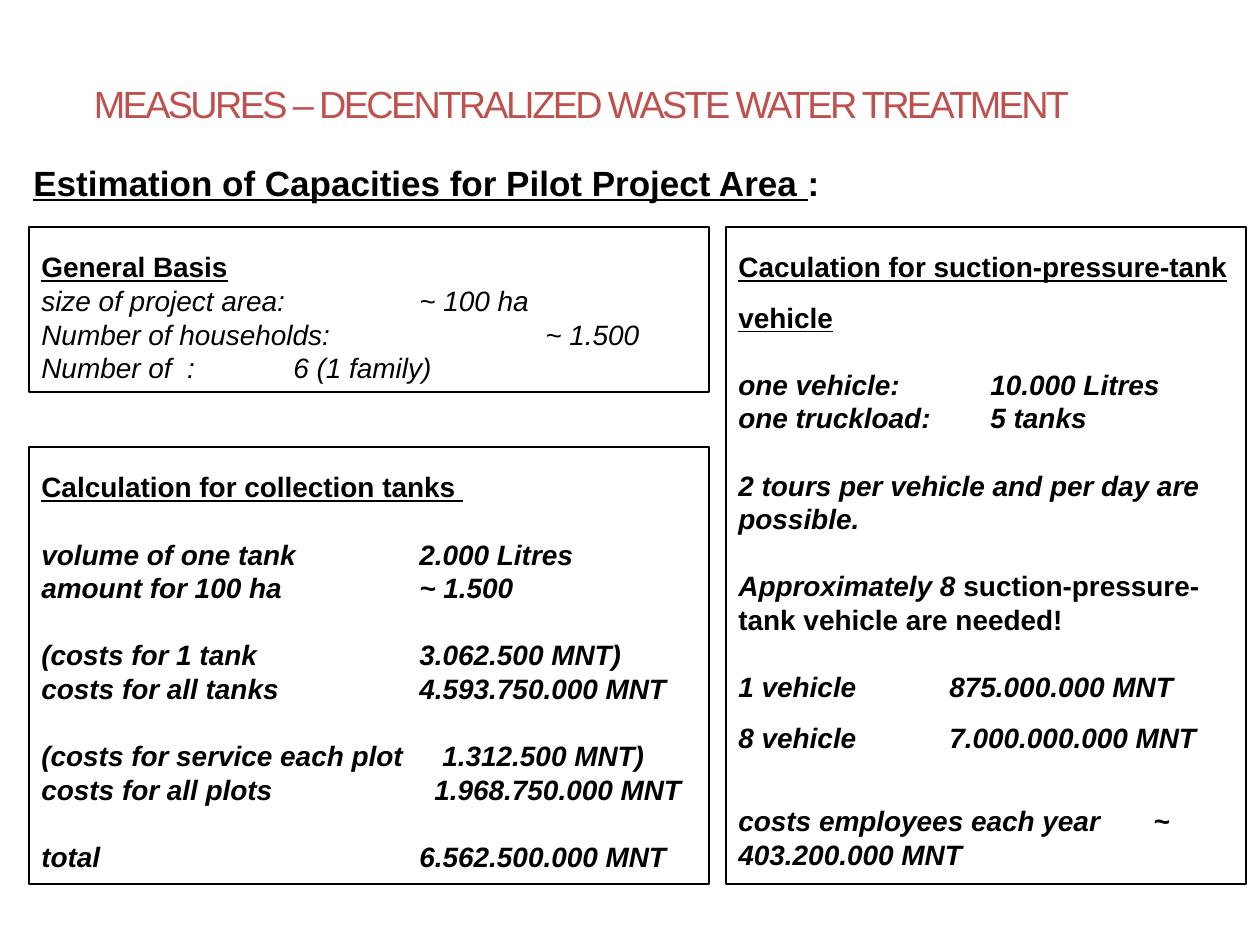
"""Build the slide estimating waste water capacities for the pilot project area."""
from lxml import etree
from pptx import Presentation
from pptx.dml.color import RGBColor
from pptx.enum.shapes import MSO_SHAPE
from pptx.enum.text import MSO_ANCHOR, PP_ALIGN
from pptx.oxml.ns import qn
from pptx.util import Emu, Pt

RECTANGLE = MSO_SHAPE.RECTANGLE
TOP, MIDDLE = MSO_ANCHOR.TOP, MSO_ANCHOR.MIDDLE
LEFT, CENTER = PP_ALIGN.LEFT, PP_ALIGN.CENTER
COLORS = {"text": "000000", "title": "C0504D", "border": "000000"}
FONT = "Arial"
BLANK_LAYOUT = 6
GAP, WIDE_GAP = 19.2, 28.8

HEADING = {"bold": True, "underline": True}
PLAIN = {"italic": True}
STRONG = {"bold": True, "italic": True}
UPRIGHT = {"bold": True}

TITLE = "MEASURES – DECENTRALIZED WASTE WATER TREATMENT"
SUBTITLE = [("Estimation of Capacities for Pilot Project Area ", HEADING), (":", UPRIGHT)]

BASIS = [
    ([("General Basis", HEADING)], {"spacing": 1.5}),
    ([("size of project area:\t~ 100 ha", PLAIN)], {"tab": 378}),
    ([("Number of households:\t~ 1.500", PLAIN)], {"tab": 504}),
    ([("Number of  :\t6 (1 family)", PLAIN)], {"tab": 252}),
]
TANKS = [
    ([("Calculation for collection tanks ", HEADING)], {"spacing": 1.5}),
    ([("volume of one tank\t2.000 Litres", STRONG)], {"tab": 378, "before": GAP}),
    ([("amount for 100 ha\t~ 1.500", STRONG)], {"tab": 378}),
    ([("(costs for 1 tank\t3.062.500 MNT)", STRONG)], {"tab": 378, "before": GAP}),
    ([("costs for all tanks\t4.593.750.000 MNT", STRONG)], {"tab": 378}),
    ([("(costs for service each plot\t1.312.500 MNT)", STRONG)], {"tab": 401, "before": GAP}),
    ([("costs for all plots\t1.968.750.000 MNT", STRONG)], {"tab": 393}),
    ([("total\t6.562.500.000 MNT", STRONG)], {"tab": 378, "before": GAP}),
]
VEHICLES = [
    ([("Caculation for suction-pressure-tank vehicle", HEADING)], {"spacing": 1.5}),
    ([("one vehicle:\t10.000 Litres", STRONG)], {"tab": 252, "before": GAP}),
    ([("one truckload:\t5 tanks", STRONG)], {"tab": 252}),
    ([("2 tours per vehicle and per day are possible.", STRONG)], {"before": GAP}),
    ([("Approximately 8 ", STRONG), ("suction-pressure-tank vehicle are needed!", UPRIGHT)],
     {"before": GAP}),
    ([("1 vehicle\t875.000.000 MNT", STRONG)], {"tab": 211, "before": GAP}),
    ([("8 vehicle\t7.000.000.000 MNT", STRONG)], {"tab": 211, "spacing": 1.5}),
    ([("costs employees each year\t~ 403.200.000 MNT", STRONG)],
     {"tab": 415, "before": WIDE_GAP}),
]
PANELS = [
    ((29, 227, 680, 165), BASIS),
    ((29, 447, 680, 437), TANKS),
    ((726, 227, 520, 657), VEHICLES),
]


def px(length):
    return Emu(round(length * 914400 / 126))


def color(name):
    return RGBColor.from_string(COLORS[name])


def add_text(para, spans, size=16, fill="text", align=LEFT, spacing=1.0,
             before=0, tab=None, tracking=None):
    para.alignment = align
    para.line_spacing = spacing
    para.space_before = Pt(before)
    if tab:
        stops = etree.SubElement(para._p.get_or_add_pPr(), qn("a:tabLst"))
        etree.SubElement(stops, qn("a:tab"), pos=str(px(tab)), algn="l")
    for text, style in spans:
        span = para.add_run()
        span.text = text
        span.font.name = FONT
        span.font.size = Pt(size)
        span.font.color.rgb = color(fill)
        for key, value in style.items():
            setattr(span.font, key, value)
        if tracking:
            span._r.get_or_add_rPr().set("spc", str(tracking))


def fill_frame(box, lines, anchor=TOP):
    frame = box.text_frame
    frame.word_wrap = True
    frame.vertical_anchor = anchor
    for index, (spans, layout) in enumerate(lines):
        para = frame.add_paragraph() if index else frame.paragraphs[0]
        add_text(para, spans, **layout)


def add_panel(page, place, lines):
    box = page.shapes.add_shape(RECTANGLE, *map(px, place))
    box.shadow.inherit = False
    box.fill.background()
    box.line.color.rgb = color("border")
    box.line.width = Pt(0.75)
    fill_frame(box, lines)


def main():
    deck = Presentation()
    deck.slide_width, deck.slide_height = px(1260), px(945)
    page = deck.slides.add_slide(deck.slide_layouts[BLANK_LAYOUT])
    title = page.shapes.add_textbox(*map(px, (31, 53, 1101, 101)))
    title_format = {"size": 21.6, "fill": "title", "align": CENTER, "tracking": -150}
    fill_frame(title, [([(TITLE, {})], title_format)], anchor=MIDDLE)
    subtitle = page.shapes.add_textbox(*map(px, (21, 155, 1055, 55)))
    fill_frame(subtitle, [(SUBTITLE, {"size": 20})])
    for place, lines in PANELS:
        add_panel(page, place, lines)
    deck.save("out.pptx")


if __name__ == "__main__":
    main()
